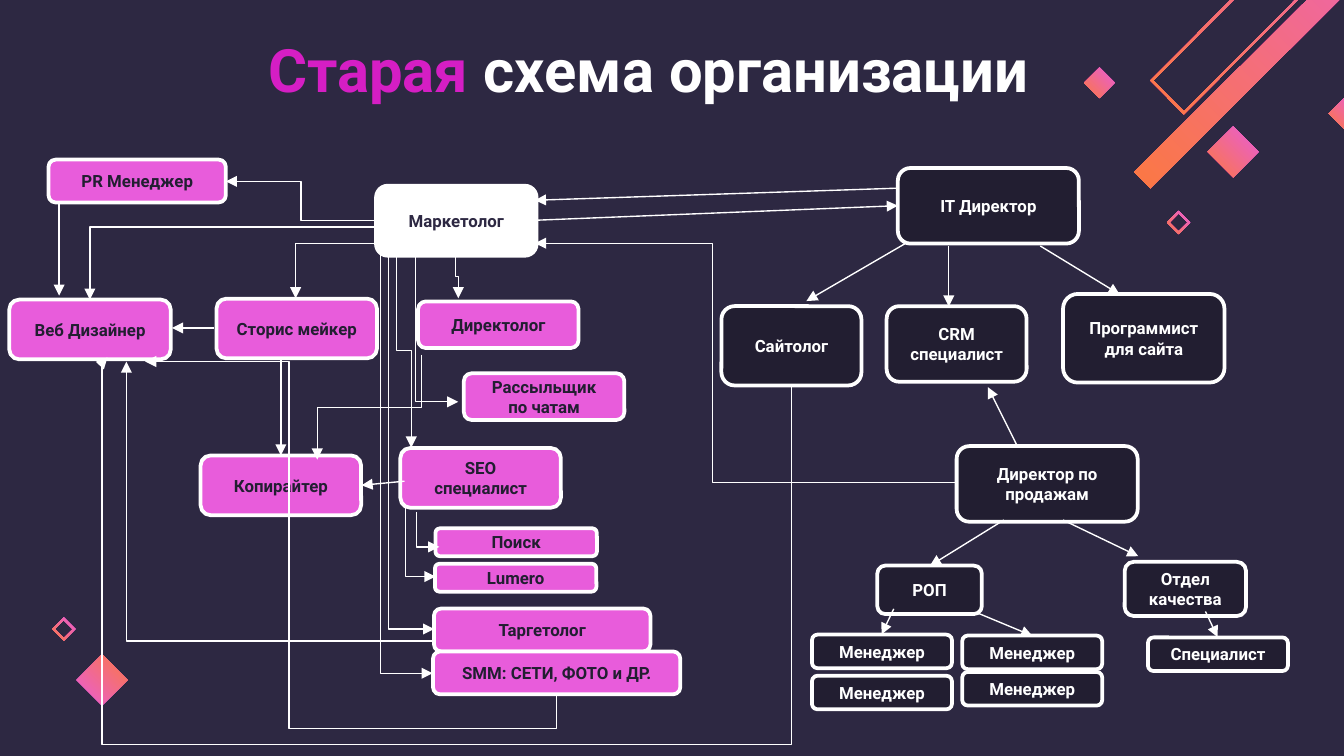
from pptx import Presentation
from pptx import util as u
from pptx.dml.color import RGBColor
from pptx.enum import shapes, text
from pptx.oxml import parse_xml
from pptx.oxml.ns import nsdecls

Pt = u.Pt
NIGHT = RGBColor(0x2D, 0x28, 0x42)
INK = RGBColor(0x22, 0x1E, 0x31)
PINK = RGBColor(0xE8, 0x5C, 0xDB)
ORANGE = RGBColor(0xFB, 0x78, 0x43)
MAGENTA = RGBColor(0xD5, 0x1E, 0xC4)
WHITE = RGBColor(0xFF, 0xFF, 0xFF)
FONT = "Roboto"

# Role name, left, top, width, height
MARKETING_ROLES = [
    ("PR Менеджер", 26, 5.5, 95, 23),
    ("Веб Дизайнер", 5, 80.5, 86.5, 32),
    ("Сторис мейкер", 116, 80, 86, 32),
    ("Копирайтер", 107.5, 164, 86, 32),
    ("SEO\vспециалист", 214.5, 160, 86, 32),
    ("Директолог", 224, 81.5, 86, 25),
    ("Поиск", 233.3, 203, 86.5, 15),
    ("Lumero", 233, 222, 86.5, 15),
    ("Таргетолог", 232.5, 246, 116, 23),
    ("SMM: СЕТИ, ФОТО и ДР.", 232, 269, 132.5, 23),
    ("Рассыльщик\vпо чатам", 248.5, 120, 86, 25),
]
MARKETING_LINKS = [
    [(150.5, 112), (150.5, 164)],
    [(216.7, 177.8), (193.7, 180)],
    [(114.5, 95.7), (92.2, 95.7)],
    [(31.7, 28), (31.7, 78.4)],
    [(244, 56.8), (244, 68.3), (245.5, 68.3), (245.5, 79.8)],
    [(212.4, 56.8), (212.4, 107.9), (220.3, 107.9), (220.3, 159.8)],
    [(223.2, 194.3), (223.2, 213), (235.4, 213)],
    [(204.5, 50.3), (158.4, 50.3), (158.4, 79.8)],
    [(226, 110), (226, 138.2), (170, 138.2), (170, 166.2)],
    [(217.4, 191.4), (217.4, 228.9), (233.3, 228.9)],
    [(201.6, 38), (161.3, 38), (161.3, 17.2), (121, 17.2)],
    [(204.5, 41.7), (48.2, 41.7), (48.2, 80.6)],
    [(203.8, 51), (203.8, 280.7), (231.8, 280.7)],
    [(208, 48.2), (208, 257), (232.6, 257)],
    [(231.8, 263.4), (67.7, 263.4), (67.7, 113.7)],
    [(298, 292.2), (298, 310.2), (154.8, 310.2), (154.8, 113.7), (77.8, 113.7)],
    [(222.5, 43), (222.5, 135.3), (245.5, 135.3)],
]
COMPANY_ROLES = [
    ("IT Директор", 101, 10, 97, 40.5),
    ("Сайтолог", 6.5, 84, 75, 42.5),
    ("CRM\vспециалист", 95, 84, 75, 40.5),
    ("Программист\vдля сайта", 189.5, 77.5, 86.5, 47.5),
    ("Директор по\vпродажам", 132.5, 159, 97, 40.5),
    ("РОП", 90, 223, 56, 26),
    ("Отдел\vкачества", 222.5, 221, 65, 29),
    ("Менеджер", 55, 260, 75, 18),
    ("Менеджер", 55, 282, 75, 18),
    ("Менеджер", 135.5, 260.5, 75, 18),
    ("Менеджер", 135.5, 280, 75, 18),
    ("Специалист", 235, 261.5, 75, 18),
]
COMPANY_LINKS = [
    [(105.3, 50.3), (52, 81.3)],
    [(128.3, 51.8), (128.3, 84.2)],
    [(177.3, 51.8), (219.8, 77.7)],
    [(157.8, 198.6), (118.2, 223.1)],
    [(98.8, 246.2), (92.3, 259.8)],
    [(143.4, 248.3), (173, 260.6)],
    [(189.5, 198.6), (229.8, 218)],
    [(265.8, 247.6), (272.3, 261.3)],
    [(165, 159), (149.2, 127.4)],
]
SHARED_LINKS = [
    [(424, 206.6), (424, 398.9), (54.7, 398.9), (54.7, 191.5), (57.6, 191.5)],
    [(481, 100.8), (286.6, 107.3)],
    [(287.3, 118), (481, 110.2)],
    [(512.6, 258.5), (381.6, 258.5), (381.6, 130.3), (286.6, 130.3)],
]


def outline(page, left, top, contours, close):
    """Build one freeform from lists of points relative to left, top."""
    placed = [[(Pt(left + x), Pt(top + y)) for x, y in points] for points in contours]
    builder = page.shapes.build_freeform(*placed[0][0], scale=1.0)
    builder.add_line_segments(placed[0][1:], close=close)
    for points in placed[1:]:
        builder.move_to(*points[0])
        builder.add_line_segments(points[1:], close=close)
    shape = builder.convert_to_shape()
    shape.shadow.inherit = False
    return shape


def add_link(page, left, top, points):
    """Draw a straight or bent arrow that ends at the last point."""
    if len(points) == 2:
        (x1, y1), (x2, y2) = points
        link = page.shapes.add_connector(
            shapes.MSO_CONNECTOR.STRAIGHT,
            Pt(left + x1), Pt(top + y1), Pt(left + x2), Pt(top + y2))
        link._element.spPr.append(parse_xml(f"<a:effectLst {nsdecls('a')}/>"))
    else:
        link = outline(page, left, top, [points], close=False)
        link.fill.background()
    link.line.color.rgb = WHITE
    link.line.width = Pt(0.75)
    link.line._get_or_add_ln().append(
        parse_xml(f'<a:tailEnd {nsdecls("a")} type="triangle"/>'))


def add_role(page, left, top, role, fill, color):
    name, x, y, width, height = role
    box = page.shapes.add_shape(shapes.MSO_SHAPE.ROUNDED_RECTANGLE,
                                Pt(left + x), Pt(top + y), Pt(width), Pt(height))
    box.shadow.inherit = False
    box.fill.solid()
    box.fill.fore_color.rgb = fill
    box.line.color.rgb = WHITE
    box.line.width = Pt(2)
    frame = box.text_frame
    frame.word_wrap = True
    frame.vertical_anchor = text.MSO_ANCHOR.MIDDLE
    frame.margin_left = frame.margin_right = Pt(3)
    frame.margin_top = frame.margin_bottom = 0
    para = frame.paragraphs[0]
    para.text = name
    para.alignment = text.PP_ALIGN.CENTER
    para.font.name, para.font.size, para.font.bold = FONT, Pt(9), True
    para.font.color.rgb = color


def add_ornament(page, left, top, contours, angle=225):
    shape = outline(page, left, top, contours, close=True)
    shape.line.fill.background()
    shape.fill.gradient()
    shape.fill.gradient_angle = angle
    for stop, color in zip(shape.fill.gradient_stops, (PINK, ORANGE)):
        stop.color.rgb = color


def diamond(x, y, radius):
    return [(x - radius, y), (x, y - radius), (x + radius, y), (x, y + radius)]


def ring(x, y):
    return [diamond(x, y, 6.2), diamond(x, y, 4.8)]


def add_top_corner(page, left, top):
    add_ornament(page, left, top, [
        [(36.3, 43.2), (176.7, -97.9), (194.7, -79.9), (54.3, 61.2)],
        [(37.8, 43.2), (54.3, 59.8), (193.3, -79.9), (176.7, -96.5)]])
    add_ornament(page, left, top, [
        [(27.7, 92.2), (196.9, -76.3), (205.5, -67.7), (36.3, 100.8)]])
    for x, y, radius in ((9, 44.3, 8.2), (80.6, 81.4, 13.6), (140, 60.8, 8.2)):
        add_ornament(page, left, top, [diamond(x, y, radius)])
    add_ornament(page, left, top, ring(51.4, 119.2))


def add_bottom_corner(page, left, top):
    add_ornament(page, left, top, [diamond(29.7, 34.3, 13.6)], angle=45)
    add_ornament(page, left, top, ring(9.2, 7))


def add_title(page, left, top, width, height):
    box = page.shapes.add_textbox(Pt(left), Pt(top), Pt(width), Pt(height))
    frame = box.text_frame
    frame.word_wrap = True
    frame.vertical_anchor = text.MSO_ANCHOR.MIDDLE
    para = frame.paragraphs[0]
    para.alignment = text.PP_ALIGN.CENTER
    para.font.name, para.font.size, para.font.bold = FONT, Pt(32), True
    for words, color in (("Старая ", MAGENTA), ("схема организации", WHITE)):
        span = para.add_run()
        span.text = words
        span.font.color.rgb = color


def add_team(page, left, top, roles, links, fill, color):
    for role in roles:
        add_role(page, left, top, role, fill, color)
    for points in links:
        add_link(page, left, top, points)


def main():
    deck = Presentation()
    deck.slide_width, deck.slide_height = Pt(720), Pt(405)
    page = deck.slides.add_slide(deck.slide_layouts[6])
    page.background.fill.solid()
    page.background.fill.fore_color.rgb = NIGHT
    add_top_corner(page, 580, 0)
    add_bottom_corner(page, 25, 330)
    add_team(page, 0, 80, MARKETING_ROLES, MARKETING_LINKS, PINK, INK)
    add_team(page, 380, 80, COMPANY_ROLES, COMPANY_LINKS, INK, WHITE)
    for points in SHARED_LINKS:
        add_link(page, 0, 0, points)
    add_role(page, 0, 80, ("Маркетолог", 201.5, 19.5, 86, 37.5), WHITE, NIGHT)
    add_title(page, 73, 10, 549, 54)
    deck.save("out.pptx")


if __name__ == "__main__":
    main()
